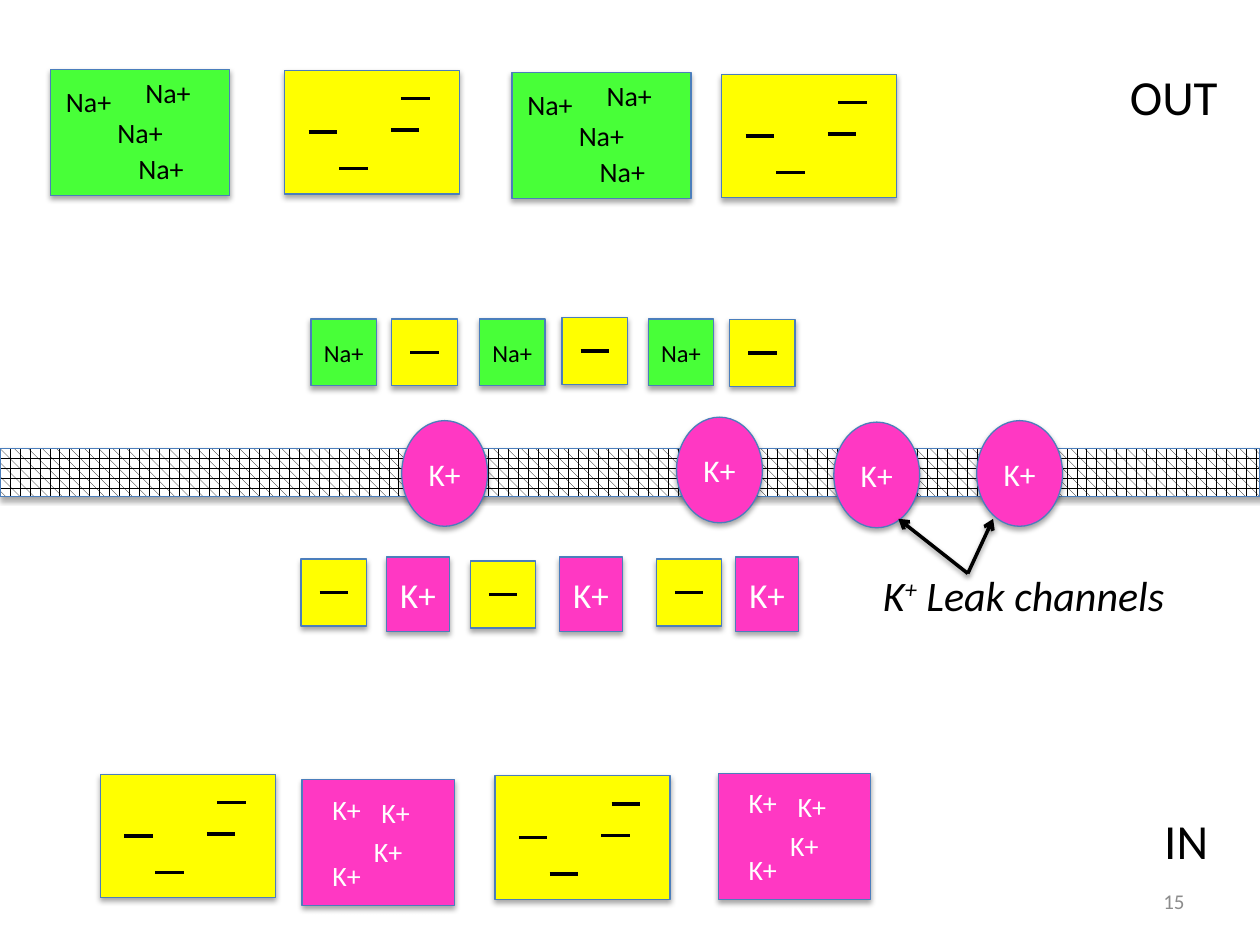
from dataclasses import dataclass

from lxml import etree
from pptx import Presentation
from pptx import util as u
from pptx.dml import color
from pptx.enum import dml, shapes, text
from pptx.oxml import ns


@dataclass(frozen=True)
class Theme:
    """Colours, font and type sizes of the slide."""
    sodium: str = "48FF38"
    potassium: str = "FF38C3"
    anion: str = "FFFF00"
    outline: str = "4B7EBC"
    ink: str = "000000"
    paper: str = "FFFFFF"
    muted: str = "8C8C8C"
    font: str = "Calibri"
    side: int = 28
    caption: int = 24
    potassium_tile: int = 20
    channel: int = 18
    ion: int = 16
    sodium_tile: int = 14
    number: int = 12


THEME = Theme()
DASH = 0.57
RECTANGLE = shapes.MSO_SHAPE.RECTANGLE


def rgb(value):
    """Turn a hex string into a colour."""
    return color.RGBColor.from_string(value)


def cast_shadow(effects, alpha):
    """Put a soft downward shadow into an effect list."""
    shadow = etree.SubElement(effects, ns.qn("a:outerShdw"), blurRad="39400",
                              dist="22900", dir="5400000", rotWithShape="0")
    tint = etree.SubElement(shadow, ns.qn("a:srgbClr"), val=THEME.ink)
    etree.SubElement(tint, ns.qn("a:alpha"), val=str(alpha * 1000))


def style_text(paragraph, size, ink, align=text.PP_ALIGN.LEFT):
    """Set the font and alignment of a paragraph."""
    paragraph.alignment = align
    paragraph.font.name = THEME.font
    paragraph.font.size = u.Pt(size)
    paragraph.font.color.rgb = rgb(ink)


def add_block(slide, kind, box, fill=None, label="", size=THEME.ion, ink=THEME.ink):
    """Add an outlined, shadowed shape with an optional centred label."""
    shape = slide.shapes.add_shape(kind, *map(u.Cm, box))
    if fill:
        shape.fill.solid()
        shape.fill.fore_color.rgb = rgb(fill)
    shape.line.color.rgb = rgb(THEME.outline)
    shape.line.width = u.Pt(0.75)
    shape.shadow.inherit = False
    cast_shadow(shape.element.spPr.find(ns.qn("a:effectLst")), 35)
    if label:
        frame = shape.text_frame
        frame.margin_left = frame.margin_right = 0
        frame.vertical_anchor = text.MSO_ANCHOR.MIDDLE
        frame.text = label
        style_text(frame.paragraphs[0], size, ink, text.PP_ALIGN.CENTER)
    return shape


def add_label(slide, box, words, size, ink=THEME.ink, wrap=True):
    """Add a text box and return it."""
    label = slide.shapes.add_textbox(*map(u.Cm, box))
    frame = label.text_frame
    frame.word_wrap = wrap
    frame.auto_size = text.MSO_AUTO_SIZE.SHAPE_TO_FIT_TEXT
    frame.text = words
    style_text(frame.paragraphs[0], size, ink)
    return label


def add_line(slide, start, end, arrow=False):
    """Add a black line, with an arrowhead and shadow if it is a pointer."""
    line = slide.shapes.add_connector(shapes.MSO_CONNECTOR.STRAIGHT,
                                      *map(u.Cm, (*start, *end)))
    line.line.color.rgb = rgb(THEME.ink)
    line.line.width = u.Pt(2)
    if arrow:
        etree.SubElement(line.line._get_or_add_ln(), ns.qn("a:tailEnd"), type="arrow")
    effects = etree.SubElement(line.element.spPr, ns.qn("a:effectLst"))
    if arrow:
        cast_shadow(effects, 38)


def add_anions(slide, box, dashes):
    """Add a yellow block with minus dashes at offsets from its corner."""
    add_block(slide, RECTANGLE, box, THEME.anion)
    left, top = box[:2]
    for x, y in dashes:
        add_line(slide, (left + x, top + y), (left + x + DASH, top + y))


def anion_tile(slide, left, top):
    """Add a small block with one centred minus dash."""
    width, height = 1.32, 1.35
    add_anions(slide, (left, top, width, height), [((width - DASH) / 2, height / 2)])


def anion_pool(slide, left, top):
    """Add a large block with four minus dashes."""
    add_anions(slide, (left, top, 3.53, 2.49),
               [(2.35, 0.57), (2.14, 1.2), (0.48, 1.24), (1.1, 1.98)])


def sodium_pool(slide, left, top):
    """Add a large sodium block with four ions."""
    add_block(slide, RECTANGLE, (left, top, 3.61, 2.54), THEME.sodium, "Na+")
    for x, y in [(1.66, 0), (1.52, 1.54), (0.06, 0.18)]:
        add_label(slide, (left + x, top + y, 1.98, 0.94), "Na+", THEME.ion)


def potassium_pool(slide, left, top):
    """Add a large potassium block with four ions."""
    add_block(slide, RECTANGLE, (left, top, 3.07, 2.54), THEME.potassium)
    for x, y in [(0.36, 0.13), (1.35, 0.2), (1.2, 0.98), (0.36, 1.47)]:
        add_label(slide, (left + x, top + y, 1.6, 0.94), "K+", THEME.ion, THEME.paper)


def membrane(slide, box):
    """Add the patterned membrane and its potassium channels."""
    band = add_block(slide, RECTANGLE, box)
    band.fill.patterned()
    band.fill.pattern = dml.MSO_PATTERN.PLAID
    band.fill.fore_color.rgb = rgb(THEME.ink)
    band.fill.back_color.rgb = rgb(THEME.paper)
    left, top = box[:2]
    for x, y in [(13.64, -0.63), (8.1, -0.56), (16.81, -0.53), (19.69, -0.56)]:
        add_block(slide, shapes.MSO_SHAPE.OVAL, (left + x, top + y, 1.73, 2.13),
                  THEME.potassium, "K+", THEME.channel, THEME.paper)


def channel_caption(slide, box):
    """Add the channel caption with pointers to two channels."""
    label = add_label(slide, box, "K", THEME.caption)
    paragraph = label.text_frame.paragraphs[0]
    paragraph.font.italic = True
    charge = paragraph.add_run()
    charge.text = "+"
    charge.font._element.set("baseline", "30000")
    paragraph.add_run().text = " Leak channels"
    left, top = box[:2]
    for x in (0.56, 2.47):
        add_line(slide, (left + 1.96, top + 0.21), (left + x, top - 0.89), arrow=True)


def outer_layer(slide, left, top):
    """Add the sodium and anion tiles lining the outside."""
    for index, (x, y) in enumerate([(1.63, 0), (5.06, -0.03), (8.44, 0.01)]):
        add_block(slide, RECTANGLE, (left + 3.4 * index, top, 1.32, 1.35),
                  THEME.sodium, "Na+", THEME.sodium_tile)
        anion_tile(slide, left + x, top + y)


def inner_layer(slide, left, top):
    """Add the anion and potassium tiles lining the inside."""
    for anion, potassium, drop in [(0, 1.72, 0.04), (3.41, 5.21, 0.08), (7.16, 8.76, 0.04)]:
        anion_tile(slide, left + anion, top + drop)
        add_block(slide, RECTANGLE, (left + potassium, top, 1.27, 1.5),
                  THEME.potassium, "K+", THEME.potassium_tile, THEME.paper)


def slide_number(slide, box):
    """Add the right-aligned slide number."""
    label = add_label(slide, box, "15", THEME.number, THEME.muted)
    label.text_frame.auto_size = text.MSO_AUTO_SIZE.NONE
    label.text_frame.vertical_anchor = text.MSO_ANCHOR.MIDDLE
    label.text_frame.paragraphs[0].alignment = text.PP_ALIGN.RIGHT


def main():
    """Build and save the slide."""
    presentation = Presentation()
    presentation.slide_width, presentation.slide_height = u.Cm(25.4), u.Cm(19.05)
    slide = presentation.slides.add_slide(presentation.slide_layouts[6])
    membrane(slide, (0, 9.04, 25.4, 0.97))
    add_label(slide, (23.22, 16.21, 1.4, 1.45), "IN", THEME.side, wrap=False)
    add_label(slide, (22.53, 1.22, 2.29, 1.45), "OUT", THEME.side, wrap=False)
    channel_caption(slide, (17.55, 11.35, 6.48, 1.27))
    outer_layer(slide, 6.27, 6.43)
    inner_layer(slide, 6.07, 11.23)
    slide_number(slide, (18.21, 17.65, 5.92, 1.02))
    for left, top in [(1.02, 1.4), (10.32, 1.46)]:
        sodium_pool(slide, left, top)
    for left, top in [(5.74, 1.42), (14.55, 1.5), (2.03, 15.61), (9.98, 15.64)]:
        anion_pool(slide, left, top)
    for left, top in [(6.09, 15.72), (14.48, 15.59)]:
        potassium_pool(slide, left, top)
    presentation.save("out.pptx")


if __name__ == "__main__":
    main()
